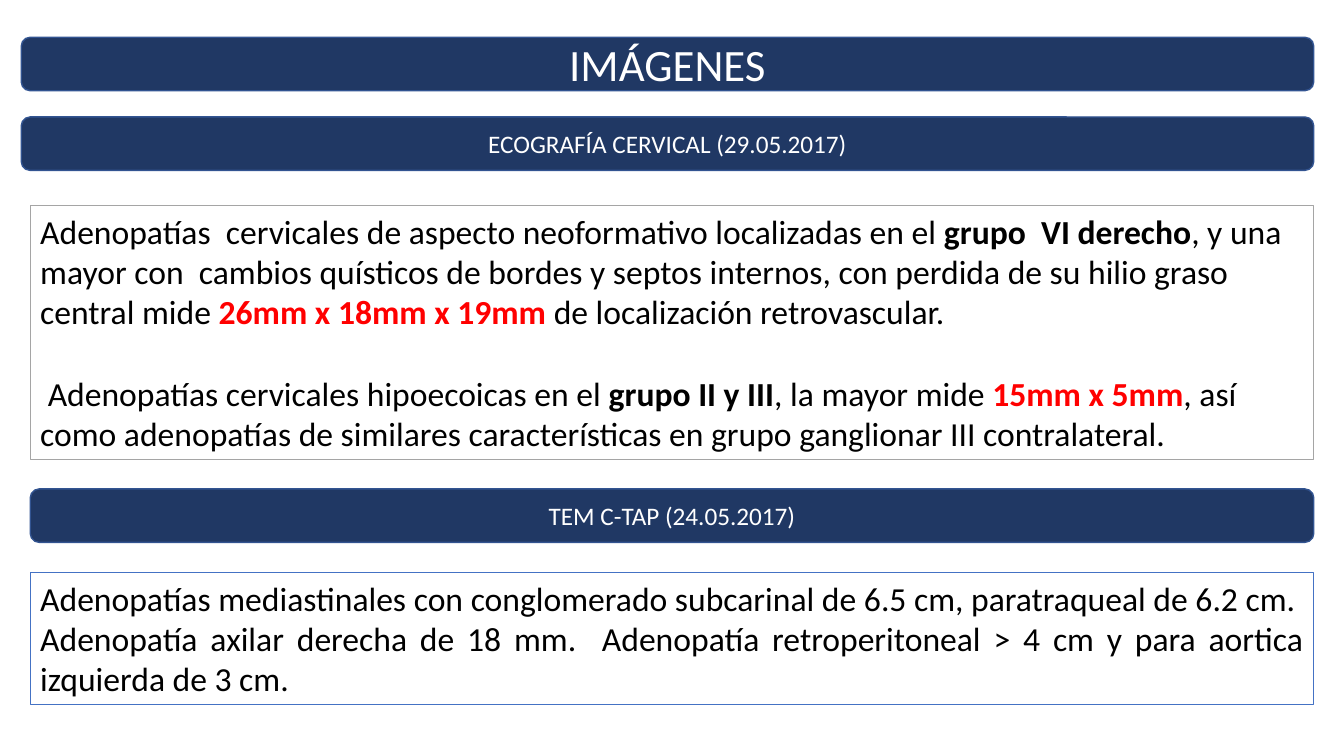
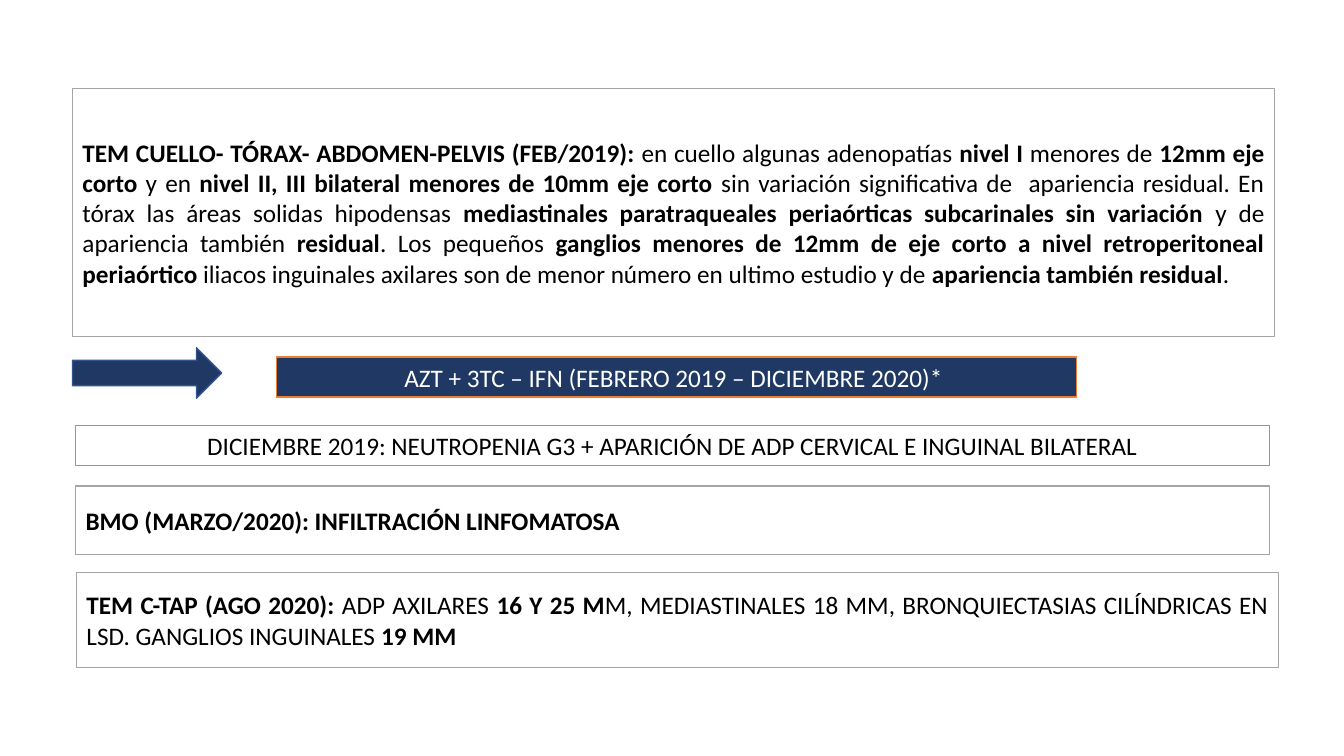
from dataclasses import dataclass

from pptx import Presentation
from pptx.dml.color import RGBColor
from pptx.enum.shapes import MSO_SHAPE
from pptx.enum.text import MSO_ANCHOR, PP_ALIGN
from pptx.util import Inches, Pt

RECT = MSO_SHAPE.RECTANGLE
ROUND = MSO_SHAPE.ROUNDED_RECTANGLE
ARROW = MSO_SHAPE.RIGHT_ARROW
LEFT, MID, JUST = PP_ALIGN.LEFT, PP_ALIGN.CENTER, PP_ALIGN.JUSTIFY
TOP, CORE = MSO_ANCHOR.TOP, MSO_ANCHOR.MIDDLE

WIDE, HIGH = Inches(13.33), Inches(7.5)
FONT = "Calibri"
NAVY, EDGE, BLUE = "203864", "325491", "4472C4"
GRAY, ORANGE, RED = "A5A5A5", "ED7D31", "FF0000"
WHITE, BLACK = "FFFFFF", "000000"
BOLD, ALERT = "|", "!"
BAND_H, LINE_H = 7.07, 5.33


@dataclass(frozen=True)
class Box:
    x: float
    y: float
    w: float
    h: float
    text: str = ""
    size: int = 18
    align: PP_ALIGN = JUST
    anchor: MSO_ANCHOR = CORE
    fill: str = WHITE
    edge: str = GRAY
    ink: str = BLACK
    form: MSO_SHAPE = RECT


def band(x: float, y: float, w: float, text: str, size: int = 18) -> Box:
    return Box(x, y, w, BAND_H, text, size, MID, fill=NAVY, edge=EDGE, ink=WHITE, form=ROUND)


def color(code: str) -> RGBColor:
    return RGBColor.from_string(code)


def write(frame, text: str, *, size: int, align: PP_ALIGN, anchor: MSO_ANCHOR, ink: str) -> None:
    frame.word_wrap = True
    frame.vertical_anchor = anchor
    for row, line in enumerate(text.split("\n")):
        para = frame.add_paragraph() if row else frame.paragraphs[0]
        para.alignment = align
        if row:
            para.space_before = Pt(size * 1.22)
        for turn, part in enumerate(line.split(BOLD)):
            if not part:
                continue
            run = para.add_run()
            run.text = part.removeprefix(ALERT)
            run.font.name, run.font.size = FONT, Pt(size)
            run.font.bold = turn % 2 == 1
            run.font.color.rgb = color(RED if part.startswith(ALERT) else ink)


def draw(slide, box: Box) -> None:
    shape = slide.shapes.add_shape(
        box.form,
        int(WIDE * box.x / 100), int(HIGH * box.y / 100),
        int(WIDE * box.w / 100), int(HIGH * box.h / 100),
    )
    shape.shadow.inherit = False
    shape.fill.solid()
    shape.fill.fore_color.rgb = color(box.fill)
    shape.line.color.rgb = color(box.edge)
    shape.line.width = Pt(1)
    if box.text:
        write(shape.text_frame, box.text, size=box.size, align=box.align,
              anchor=box.anchor, ink=box.ink)


SCANS = [
    Box(2.25, 75.73, 95.5, 17.47,
        "Adenopatías mediastinales con conglomerado subcarinal de 6.5 cm, paratraqueal de 6.2 cm.  "
        "Adenopatía axilar derecha de 18 mm.  Adenopatía retroperitoneal > 4 cm y para aortica "
        "izquierda de 3 cm.", 24, anchor=TOP, edge=BLUE),
    band(1.58, 4.93, 96.17, "IMÁGENES", 32),
    Box(2.25, 27.2, 95.5, 33.6,
        "Adenopatías  cervicales de aspecto neoformativo localizadas en el |grupo  VI derecho|, "
        "y una mayor con  cambios quísticos de bordes y septos internos, con perdida de su hilio "
        "graso central mide |!26mm x 18mm x 19mm |de localización retrovascular.\n"
        " Adenopatías cervicales hipoecoicas en el |grupo II y III|, la mayor mide "
        "|!15mm x 5mm|, así como adenopatías de similares características en grupo ganglionar "
        "III contralateral.", 24, LEFT, TOP),
    band(1.58, 15.47, 96.17, "ECOGRAFÍA CERVICAL (29.05.2017)"),
    band(2.25, 64.67, 95.5, "TEM C-TAP (24.05.2017)"),
]

COURSE = [
    Box(20.56, 47.2, 59.56, LINE_H, "AZT + 3TC – IFN (FEBRERO 2019 – DICIEMBRE 2020)* ",
        align=MID, anchor=TOP, fill=NAVY, edge=ORANGE, ink=WHITE),
    Box(5.4, 46, 11.1, 6.67, fill=NAVY, edge=EDGE, form=ARROW),
    Box(5.4, 11.73, 89.42, 32.8,
        "|TEM CUELLO- TÓRAX- ABDOMEN-PELVIS (FEB/2019):| en cuello algunas adenopatías |nivel I| "
        "menores de |12mm eje corto |y en |nivel II, III bilateral menores de 10mm eje corto |"
        "sin variación significativa de  apariencia residual. En tórax las áreas solidas "
        "hipodensas |mediastinales paratraqueales periaórticas subcarinales sin variación| y de "
        "apariencia también |residual|. Los pequeños |ganglios menores de 12mm de eje corto a "
        "nivel retroperitoneal periaórtico |iliacos inguinales axilares son de menor número en "
        "ultimo estudio y de |apariencia también residual|."),
    Box(5.63, 56.27, 88.82, LINE_H,
        "DICIEMBRE 2019: NEUTROPENIA G3 + APARICIÓN DE ADP CERVICAL E INGUINAL BILATERAL",
        align=MID, anchor=TOP, edge=ORANGE),
    Box(5.63, 64.27, 88.82, 9.07, "|BMO (MARZO/2020): INFILTRACIÓN LINFOMATOSA|"),
    Box(5.7, 75.73, 89.42, 12.53,
        "|TEM C-TAP (AGO 2020): |ADP AXILARES |16 Y 25 M|M, MEDIASTINALES 18 MM, "
        "BRONQUIECTASIAS CILÍNDRICAS EN LSD. GANGLIOS INGUINALES |19 MM|"),
]


def main() -> None:
    deck = Presentation()
    deck.slide_width, deck.slide_height = WIDE, HIGH
    blank = deck.slide_layouts[6]
    for page in (SCANS, COURSE):
        slide = deck.slides.add_slide(blank)
        for box in page:
            draw(slide, box)
    deck.save("out.pptx")


if __name__ == "__main__":
    main()
